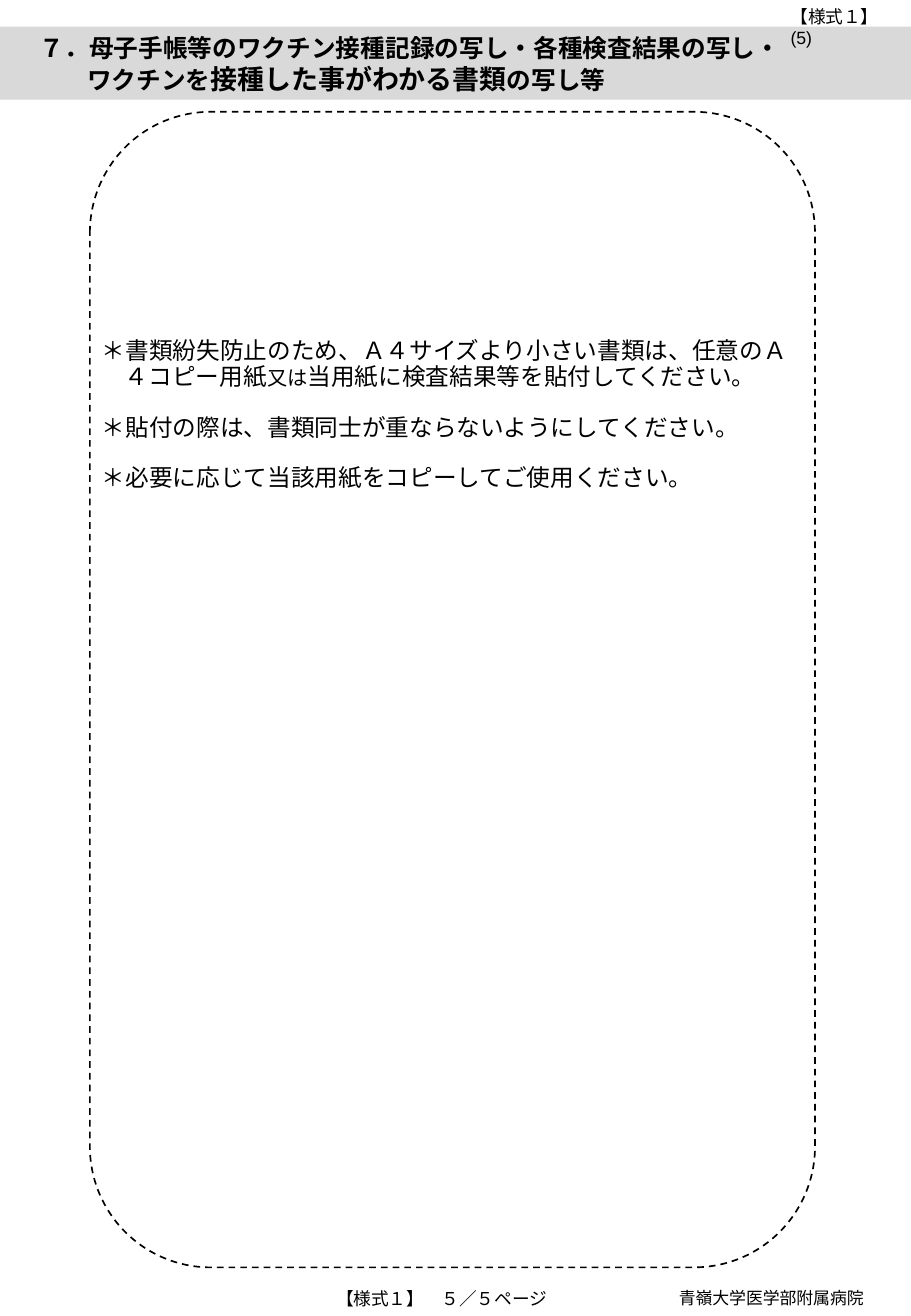
from lxml import etree
from pptx import Presentation
from pptx.dml.color import RGBColor
from pptx.enum.dml import MSO_LINE
from pptx.enum.lang import MSO_LANGUAGE_ID
from pptx.enum.shapes import MSO_SHAPE
from pptx.enum.text import MSO_ANCHOR
from pptx.oxml.ns import qn
from pptx.util import Inches, Pt

RECTANGLE = MSO_SHAPE.RECTANGLE
ROUNDED = MSO_SHAPE.ROUNDED_RECTANGLE
DASH = MSO_LINE.DASH
TOP, MIDDLE = MSO_ANCHOR.TOP, MSO_ANCHOR.MIDDLE
JAPANESE = MSO_LANGUAGE_ID.JAPANESE
PAGE_WIDTH, PAGE_HEIGHT = 7.5, 10.83
BLACK, GREY = "000000", "D9D9D9"


def colour(hex_string):
    return RGBColor.from_string(hex_string)


def add_panel(page, kind, box, fill=None):
    panel = page.shapes.add_shape(kind, *map(Inches, box))
    panel.shadow.inherit = False
    if fill:
        panel.fill.solid()
        panel.fill.fore_color.rgb = colour(fill)
        panel.line.fill.background()
    else:
        panel.fill.background()
        panel.line.color.rgb = colour(BLACK)
        panel.line.width = Pt(1)
        panel.line.dash_style = DASH
    return panel


def add_span(para, text, size, font, bold):
    span = para.add_run()
    span.text = text
    span.font.size = Pt(size)
    span.font.name = font
    span.font.bold = bold
    span.font.color.rgb = colour(BLACK)
    span.font.language_id = JAPANESE
    # East Asian letters use the same font
    latin = span.font._element.find(qn("a:latin"))
    east_asian = etree.Element(qn("a:ea"), typeface=font)
    latin.addnext(east_asian)


def add_text(page, box, paragraphs, font="Arial", bold=False, anchor=TOP):
    """Each paragraph is a list of (text, size) pairs."""
    frame = page.shapes.add_textbox(*map(Inches, box)).text_frame
    frame.word_wrap = True
    frame.vertical_anchor = anchor
    for index, spans in enumerate(paragraphs):
        para = frame.add_paragraph() if index else frame.paragraphs[0]
        for text, size in spans:
            add_span(para, text, size, font, bold)
    return frame.paragraphs


def indent(para, margin, first_line):
    properties = para._p.get_or_add_pPr()
    properties.set("marL", str(Inches(margin)))
    properties.set("indent", str(Inches(first_line)))


def add_heading(page, box):
    left, top, width, height = box
    add_panel(page, RECTANGLE, (left, top, width, height - 0.02), GREY)
    first, second = add_text(page, (left + 0.23, top, width - 0.39, height), [
        [("７．母子手帳等のワクチン接種記録の写し・各種検査結果の写し・", 14.6)],
        [("ワクチンを", 14.6), ("接種した事がわかる書類", 16), ("の写し等", 14.6)],
    ], bold=True)
    indent(first, 0.39, -0.39)
    indent(second, 0.39, 0)


def add_paste_area(page, box):
    left, top, width, _ = box
    notes = add_text(page, (left, top + 1.31, width, 2.38), [
        [("＊書類紛失防止のため、Ａ４サイズより小さい書類は、任意のＡ４コピー用紙", 14),
         ("又は", 12), ("当用紙に検査結果等を貼付してください。", 14)],
        [("＊貼付の際は、書類同士が重ならないようにしてください。", 14)],
        [("＊必要に応じて当該用紙をコピーしてご使用ください。", 14)],
    ], anchor=MIDDLE)
    for index, para in enumerate(notes):
        indent(para, 0.19, -0.19)
        para.line_spacing = 0.9
        para.space_before = Pt(15 if index else 0)
    add_panel(page, ROUNDED, box)


def add_form_label(page, box):
    # The narrow box puts the sheet number on its own line
    add_text(page, box, [[("【様式１】(5)", 10.5)]])


def add_footer(page, box):
    left, top, _, height = box
    add_text(page, (left + 2.67, top, 2.21, height), [[("【様式１】　５／５ページ", 10.5)]])
    add_text(page, (left + 5.49, top, 1.74, height), [[("青嶺大学医学部附属病院", 10)]],
             font="Calibri")


def main():
    deck = Presentation()
    deck.slide_width, deck.slide_height = Inches(PAGE_WIDTH), Inches(PAGE_HEIGHT)
    page = deck.slides.add_slide(deck.slide_layouts[6])
    add_heading(page, (0, 0.22, PAGE_WIDTH, 0.62))
    add_paste_area(page, (0.74, 0.92, 5.97, 9.51))
    add_footer(page, (0, 10.55, PAGE_WIDTH, 0.28))
    add_form_label(page, (6.41, 0, 1.05, 0.28))
    deck.save("out.pptx")


if __name__ == "__main__":
    main()
